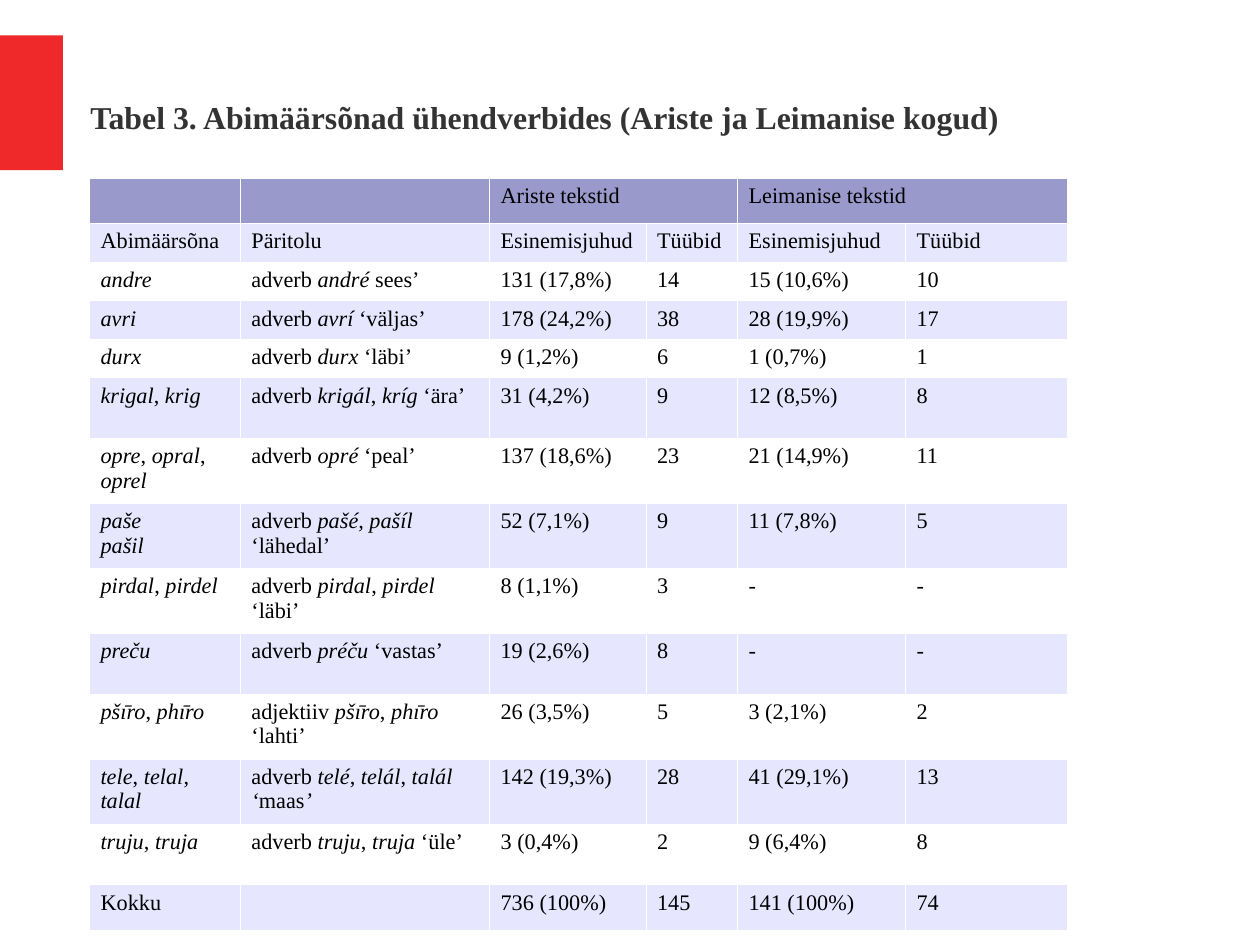
from lxml.etree import SubElement
from pptx import Presentation
from pptx.dml.color import RGBColor
from pptx.enum.shapes import MSO_SHAPE
from pptx.enum.text import MSO_ANCHOR
from pptx.oxml.ns import qn
from pptx.util import Cm, Inches, Pt

TITLE = "Tabel 3. Abimäärsõnad ühendverbides (Ariste ja Leimanise kogud)"

# Asterisks enclose italic words.
ADVERB_ROWS = [
    ("", "", "Ariste tekstid", "", "Leimanise tekstid", ""),
    ("Abimäärsõna", "Päritolu", "Esinemisjuhud", "Tüübid", "Esinemisjuhud", "Tüübid"),
    ("*andre*", "adverb *andré* sees’", "131 (17,8%)", "14", "15 (10,6%)", "10"),
    ("*avri*", "adverb *avrí* ‘väljas’", "178 (24,2%)", "38", "28 (19,9%)", "17"),
    ("*durx*", "adverb *durx* ‘läbi’", "9 (1,2%)", "6", "1 (0,7%)", "1"),
    ("*krigal*, *krig*", "adverb *krigál*, *kríg* ‘ära’", "31 (4,2%)", "9", "12 (8,5%)", "8"),
    ("*opre*, *opral*, *oprel*", "adverb *opré* ‘peal’", "137 (18,6%)", "23", "21 (14,9%)", "11"),
    ("*paše*\n*pašil*", "adverb *pašé, pašíl *‘lähedal’", "52 (7,1%)", "9", "11 (7,8%)", "5"),
    ("*pirdal*, *pirdel*", "adverb *pirdal*, *pirdel* ‘läbi’", "8 (1,1%)", "3", "-", "-"),
    ("*preču*", "adverb *préču *‘vastas’", "19 (2,6%)", "8", "-", "-"),
    ("*pšı̄ro*, *phı̄ro*", "adjektiiv *pšı̄ro*, *phı̄ro* ‘lahti’", "26 (3,5%)", "5", "3 (2,1%)", "2"),
    ("*tele*, *telal*, *talal*", "adverb *telé*, *telál*, *talál ‘*maas*’*",
     "142 (19,3%)", "28", "41 (29,1%)", "13"),
    ("*truju*, *truja*", "adverb *truju*, *truja* ‘üle’", "3 (0,4%)", "2", "9 (6,4%)", "8"),
    ("Kokku", "", "736 (100%)", "145", "141 (100%)", "74"),
]
COLUMN_WIDTHS = [1.32, 2.18, 1.37, 0.8, 1.47, 1.42]
ROW_HEIGHTS = [0.39, 0.34, 0.34, 0.33, 0.34, 0.53, 0.57, 0.56, 0.57, 0.53, 0.57, 0.57, 0.53, 0.4]
GROUP_STARTS = [2, 4]

COLORS = {"accent": "EF2929", "title": "333333", "text": "000000",
          "header": "9999CC", "band": "E6E6FF", "plain": "FFFFFF", "border": "FFFFFF"}
FONT = "Times New Roman"
TITLE_FORMAT = {"name": FONT, "size": Pt(20), "bold": True}
CELL_FORMAT = {"name": FONT, "size": Pt(14), "bold": False}
CELL_INSETS = {"margin_left": Inches(0.1), "margin_right": Inches(0.1),
               "margin_top": Inches(0.05), "margin_bottom": Inches(0.05)}
TITLE_FRAME = {"margin_left": 0, "margin_right": 0, "margin_top": 0, "margin_bottom": 0,
               "word_wrap": True, "vertical_anchor": MSO_ANCHOR.MIDDLE}


def color(key):
    return RGBColor.from_string(COLORS[key])


def set_attributes(target, values):
    for attribute, value in values.items():
        setattr(target, attribute, value)


def style_font(font, values, color_key):
    set_attributes(font, values)
    font.color.rgb = color(color_key)


def write_marked(frame, marked):
    """Fill a frame, one paragraph a line, with the parts between asterisks in italics."""
    for index, line in enumerate(marked.split("\n")):
        paragraph = frame.paragraphs[0] if index == 0 else frame.add_paragraph()
        style_font(paragraph.font, CELL_FORMAT, "text")
        for position, words in enumerate(line.split("*")):
            if words:
                run = paragraph.add_run()
                run.text = words
                style_font(run.font, CELL_FORMAT, "text")
                run.font.italic = position % 2 == 1


def add_borders(cell):
    properties = cell._tc.get_or_add_tcPr()
    for side in ("a:lnL", "a:lnR", "a:lnT", "a:lnB"):
        line = SubElement(properties, qn(side), w=str(Pt(0.06)))
        fill = SubElement(line, qn("a:solidFill"))
        SubElement(fill, qn("a:srgbClr"), val=COLORS["border"])


def add_title(slide):
    box = slide.shapes.add_textbox(Inches(0.79), Inches(0.33), Inches(9.68), Inches(1.38))
    set_attributes(box.text_frame, TITLE_FRAME)
    run = box.text_frame.paragraphs[0].add_run()
    run.text = TITLE
    style_font(run.font, TITLE_FORMAT, "title")


def add_accent(slide):
    accent = slide.shapes.add_shape(MSO_SHAPE.RECTANGLE, 0, Inches(0.31), Inches(0.55), Inches(1.18))
    accent.shadow.inherit = False
    accent.fill.solid()
    accent.fill.fore_color.rgb = color("accent")
    accent.line.fill.background()


def add_adverb_table(slide):
    table = slide.shapes.add_table(
        len(ADVERB_ROWS), len(COLUMN_WIDTHS), Inches(0.78), Inches(1.56),
        Inches(sum(COLUMN_WIDTHS)), Inches(sum(ROW_HEIGHTS))).table
    set_attributes(table, {"first_row": False, "horz_banding": False})
    for column, width in zip(table.columns, COLUMN_WIDTHS):
        column.width = Inches(width)
    for row, height in zip(table.rows, ROW_HEIGHTS):
        row.height = Inches(height)
    for start in GROUP_STARTS:
        table.cell(0, start).merge(table.cell(0, start + 1))
    for row_index, entries in enumerate(ADVERB_ROWS):
        band = "header" if row_index == 0 else ("plain", "band")[row_index % 2]
        for column_index, entry in enumerate(entries):
            cell = table.cell(row_index, column_index)
            set_attributes(cell, CELL_INSETS)
            add_borders(cell)
            cell.fill.solid()
            cell.fill.fore_color.rgb = color(band)
            write_marked(cell.text_frame, entry)


def main():
    presentation = Presentation()
    presentation.slide_width = Cm(28)
    presentation.slide_height = Cm(21)
    slide = presentation.slides.add_slide(presentation.slide_layouts[6])
    add_accent(slide)
    add_title(slide)
    add_adverb_table(slide)
    presentation.save("out.pptx")


if __name__ == "__main__":
    main()
